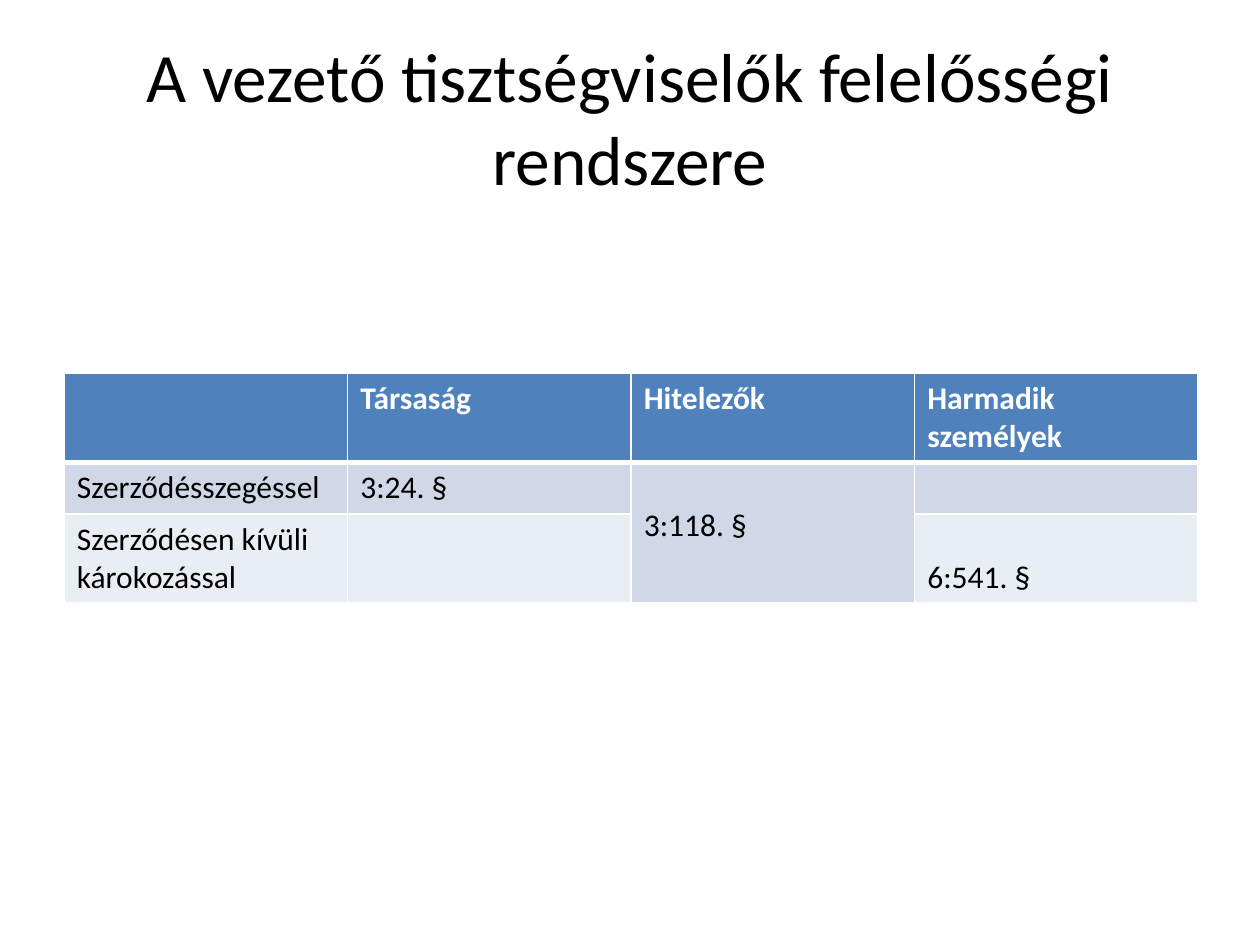
from lxml import etree
from pptx import Presentation
from pptx import util as u
from pptx.dml.color import RGBColor
from pptx.enum import text
from pptx.oxml.ns import qn

Inches = u.Inches
COLORS = {"black": "000000", "white": "FFFFFF", "header": "4F81BD",
          "band1": "D0D8E8", "band2": "E9EDF4"}
FONT = "Calibri"
ROWS = [
    ["", "Társaság", "Hitelezők", "Harmadik személyek"],
    ["Szerződésszegéssel", "3:24. §", "3:118. §", ""],
    ["Szerződésen kívüli károkozással", "", "", "6:541. §"],
]
ROW_HEIGHTS = [0.71, 0.41, 0.7]
ROW_FILLS = ["header", "band1", "band2"]
LOWERED = {(1, 2), (2, 3)}  # cells whose text starts one line down


def rgb(name):
    return RGBColor.from_string(COLORS[name])


def write(tf, content, size=18, color="black", bold=False, align=None):
    p = tf.paragraphs[0]
    p.alignment = align
    r = p.add_run()
    r.text = content
    r.font.name, r.font.size, r.font.bold = FONT, u.Pt(size), bold
    r.font.color.rgb = rgb(color)


def add_title(s, content):
    sp = s.shapes.add_textbox(Inches(0.5), Inches(0.3), Inches(9), Inches(1.25))
    tf = sp.text_frame
    tf.word_wrap = True
    tf.vertical_anchor = text.MSO_ANCHOR.MIDDLE
    write(tf, content, size=39.6, align=text.PP_ALIGN.CENTER)


def set_borders(cell, bottom=1):
    tc_pr = cell._tc.get_or_add_tcPr()
    for side, width in (("L", 1), ("R", 1), ("T", 1), ("B", bottom)):
        ln = etree.SubElement(tc_pr, qn(f"a:ln{side}"), w=str(u.Pt(width)))
        fill = etree.SubElement(ln, qn("a:solidFill"))
        etree.SubElement(fill, qn("a:srgbClr"), val=COLORS["white"])


def add_grid(s):
    frame = s.shapes.add_table(len(ROWS), len(ROWS[0]), Inches(0.51), Inches(2.96),
                               Inches(9), Inches(sum(ROW_HEIGHTS)))
    table = frame.table
    for i, row in enumerate(ROWS):
        table.rows[i].height = Inches(ROW_HEIGHTS[i])
        header = i == 0
        for j, content in enumerate(row):
            cell = table.cell(i, j)
            set_borders(cell, bottom=3 if header else 1)
            cell.fill.solid()
            cell.fill.fore_color.rgb = rgb(ROW_FILLS[i])
            if (i, j) in LOWERED:
                cell.margin_top = Inches(0.35)
            if content:
                write(cell.text_frame, content, bold=header,
                      color="white" if header else "black")
    # Cell spanning both body rows
    table.cell(1, 2).merge(table.cell(2, 2))


def main():
    prs = Presentation()
    prs.slide_width, prs.slide_height = Inches(10), Inches(7.5)
    s = prs.slides.add_slide(prs.slide_layouts[6])
    # Title
    add_title(s, "A vezető tisztségviselők felelősségi rendszere")
    # Table
    add_grid(s)
    prs.save("out.pptx")


if __name__ == "__main__":
    main()
